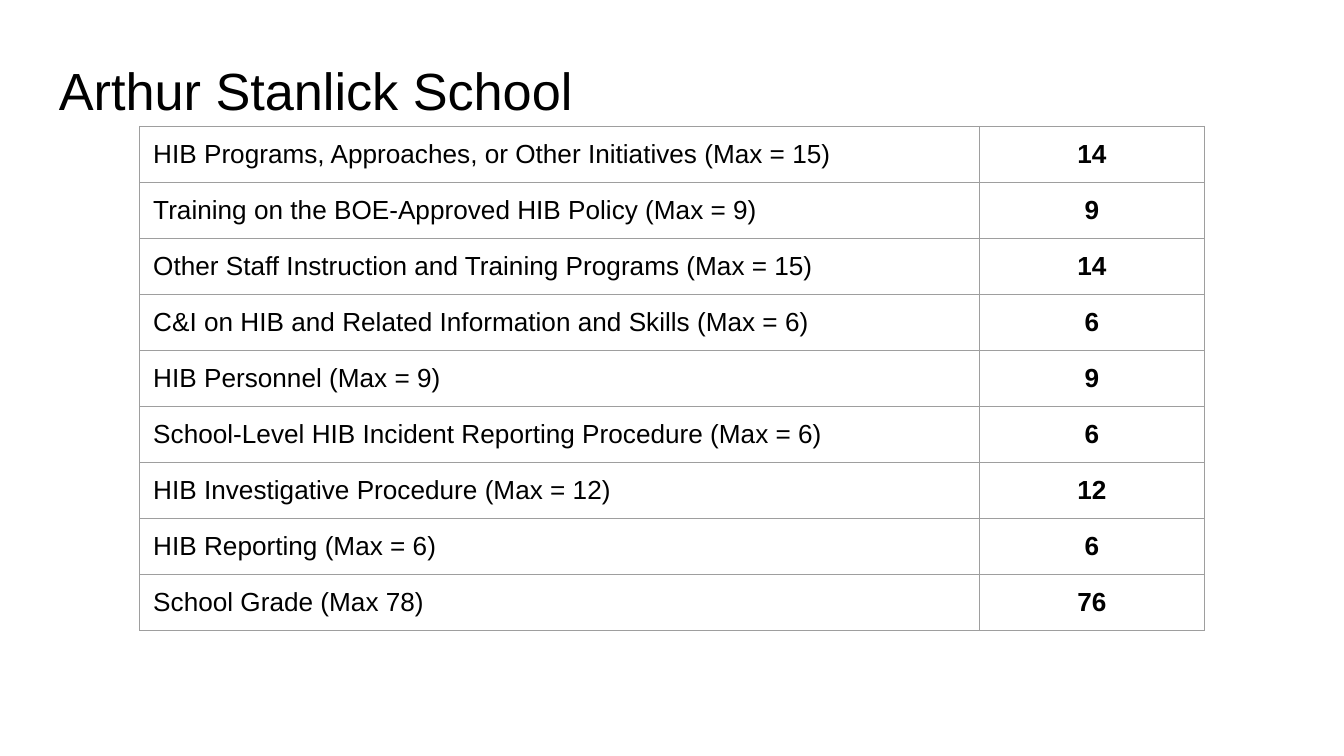
from typing import NamedTuple

from lxml.etree import SubElement
from pptx import Presentation
from pptx.dml.color import RGBColor
from pptx.enum.text import PP_ALIGN
from pptx.oxml.ns import qn
from pptx.util import Inches, Pt


class Score(NamedTuple):
    category: str
    points: int


SCORES = [
    Score("HIB Programs, Approaches, or Other Initiatives (Max = 15)", 14),
    Score("Training on the BOE-Approved HIB Policy (Max = 9)", 9),
    Score("Other Staff Instruction and Training Programs (Max = 15)", 14),
    Score("C&I on HIB and Related Information and Skills (Max = 6)", 6),
    Score("HIB Personnel (Max = 9)", 9),
    Score("School-Level HIB Incident Reporting Procedure (Max = 6)", 6),
    Score("HIB Investigative Procedure (Max = 12)", 12),
    Score("HIB Reporting (Max = 6)", 6),
    Score("School Grade (Max 78)", 76),
]
COLUMN_WIDTHS = (6.25, 1.67)
TABLE_HEIGHT = Inches(3.75)
INSET = Inches(0.1)


def color(hex_code: str) -> RGBColor:
    return RGBColor.from_string(hex_code)


def write(frame, text: str, *, size: float, bold: bool = False,
          align: PP_ALIGN = PP_ALIGN.LEFT) -> None:
    paragraph = frame.paragraphs[0]
    paragraph.alignment = align
    run = paragraph.add_run()
    run.text = text
    run.font.name = "Arial"
    run.font.size = Pt(size)
    run.font.bold = bold
    run.font.color.rgb = color("000000")


def set_borders(cell, hex_code: str, width: float) -> None:
    properties = cell._tc.get_or_add_tcPr()
    for side in ("a:lnL", "a:lnR", "a:lnT", "a:lnB"):
        line = SubElement(properties, qn(side), w=str(Pt(width)))
        fill = SubElement(line, qn("a:solidFill"))
        SubElement(fill, qn("a:srgbClr"), val=hex_code)


def fill_cell(cell, text: str, **text_format) -> None:
    cell.margin_left = cell.margin_right = cell.margin_top = INSET
    # A smaller bottom margin keeps the text from stretching the row.
    cell.margin_bottom = Inches(0.08)
    set_borders(cell, "9E9E9E", 0.75)
    cell.fill.background()
    write(cell.text_frame, text, size=14, **text_format)


def add_title(slide, text: str) -> None:
    title = slide.shapes.add_textbox(
        Inches(0.34), Inches(0.33), Inches(9.32), Inches(0.53))
    frame = title.text_frame
    frame.word_wrap = True
    frame.margin_left = frame.margin_right = INSET
    frame.margin_top = frame.margin_bottom = INSET
    write(frame, text, size=28)


def add_score_table(slide, scores: list[Score]) -> None:
    table = slide.shapes.add_table(
        len(scores), len(COLUMN_WIDTHS), Inches(1.04), Inches(0.94),
        Inches(sum(COLUMN_WIDTHS)), TABLE_HEIGHT).table
    table.first_row = table.horz_banding = False
    for column, width in zip(table.columns, COLUMN_WIDTHS):
        column.width = Inches(width)
    for index, score in enumerate(scores):
        table.rows[index].height = TABLE_HEIGHT // len(scores)
        fill_cell(table.cell(index, 0), score.category)
        fill_cell(table.cell(index, 1), str(score.points),
                  bold=True, align=PP_ALIGN.CENTER)


def main() -> None:
    presentation = Presentation()
    presentation.slide_width = Inches(10)
    presentation.slide_height = presentation.slide_width * 9 // 16
    slide = presentation.slides.add_slide(presentation.slide_layouts[6])
    add_title(slide, "Arthur Stanlick School")
    add_score_table(slide, SCORES)
    presentation.save("out.pptx")


if __name__ == "__main__":
    main()
